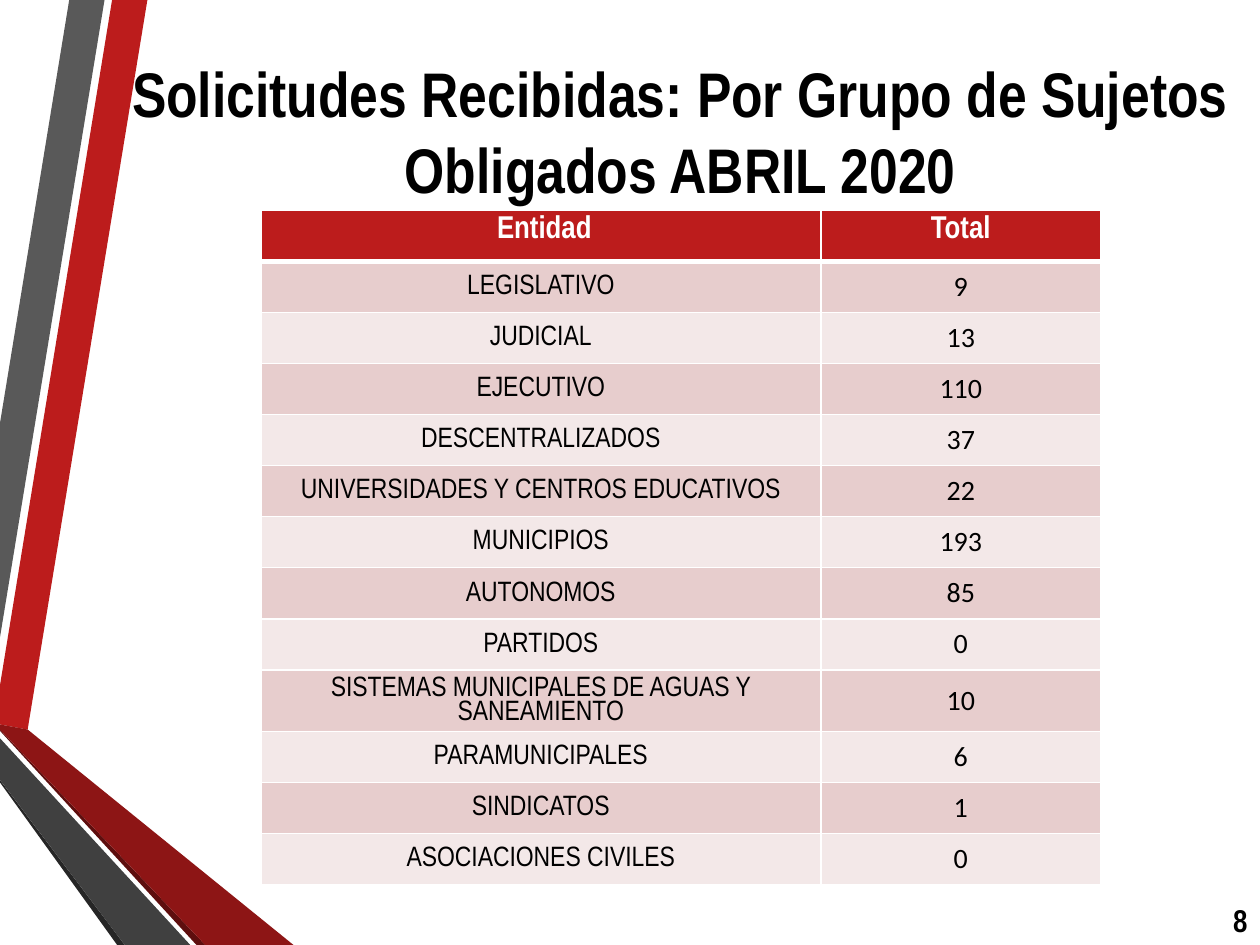
from typing import NamedTuple

from lxml.etree import SubElement
from pptx import Presentation
from pptx.dml.color import RGBColor
from pptx.enum.text import MSO_ANCHOR as Anchor, PP_ALIGN as Align
from pptx.oxml.ns import qn
from pptx.util import Inches, Pt

WIDTH, HEIGHT = 10, 7.5
NARROW, ROUND = "Arial Narrow", "Calibri"
RED, WHITE, BLACK = "BC1C1C", "FFFFFF", "000000"
BANDS = ("E7CDCD", "F3E8E8")
TIGHT = 0.9


class Ribbon(NamedTuple):
    color: str
    corners: list[tuple[float, float]]


class Entity(NamedTuple):
    label: str
    total: int


class Column(NamedTuple):
    heading: str
    share: float
    font: str
    spacing: float
    insets: tuple[float, float, float, float]


RIBBONS = [
    Ribbon(RED, [(0, 5.44), (0, 5.75), (0.22, 5.79), (1.17, 0), (0.89, 0)]),
    Ribbon("595959", [(0.83, 0), (0.55, 0), (0, 3.36), (0, 5.06)]),
    Ribbon("262626", [(0, 6.19), (0, 6.21), (0.93, HEIGHT), (0.99, HEIGHT)]),
    Ribbon("5E0E0E", [(0, 5.79), (0, 5.8), (1.56, HEIGHT), (1.63, HEIGHT)]),
    Ribbon("8D1515", [(0, 5.79), (1.63, HEIGHT), (2.33, HEIGHT), (0.22, 5.79), (0, 5.75)]),
    Ribbon("404040", [(0, 6.19), (0.99, HEIGHT), (1.51, HEIGHT), (0, 5.86)]),
]

COLUMNS = [
    Column(" Entidad", 2 / 3, NARROW, TIGHT, (0.01, 0.01, 0.01, 0)),
    Column("Total", 1 / 3, ROUND, 1, (0.1, 0.05, 0.1, 0.05)),
]

ENTITIES = [
    Entity("LEGISLATIVO", 9),
    Entity("JUDICIAL", 13),
    Entity("EJECUTIVO", 110),
    Entity("DESCENTRALIZADOS", 37),
    Entity("UNIVERSIDADES Y CENTROS EDUCATIVOS", 22),
    Entity("MUNICIPIOS", 193),
    Entity("AUTONOMOS", 85),
    Entity("PARTIDOS", 0),
    Entity("SISTEMAS MUNICIPALES DE AGUAS Y SANEAMIENTO", 10),
    Entity("PARAMUNICIPALES", 6),
    Entity("SINDICATOS", 1),
    Entity("ASOCIACIONES CIVILES", 0),
]


def paint(fill, color: str) -> None:
    fill.solid()
    fill.fore_color.rgb = RGBColor.from_string(color)


def write(frame, text: str, *, size: float, font: str = NARROW, color: str = BLACK,
          bold: bool = False, align=Align.CENTER, spacing: float = 1) -> None:
    paragraph = frame.paragraphs[0]
    paragraph.text = text
    paragraph.alignment = align
    paragraph.line_spacing = spacing
    for run in paragraph.runs:
        run.font.size = Pt(size)
        run.font.name = font
        run.font.bold = bold
        run.font.color.rgb = RGBColor.from_string(color)


def add_label(slide, text: str, box: tuple[float, float, float, float], **style) -> None:
    frame = slide.shapes.add_textbox(*map(Inches, box)).text_frame
    frame.word_wrap = True
    frame.vertical_anchor = Anchor.MIDDLE
    write(frame, text, bold=True, **style)


def add_ribbon(slide, ribbon: Ribbon) -> None:
    start, *others = [(Inches(x), Inches(y)) for x, y in ribbon.corners]
    outline = slide.shapes.build_freeform(*start)
    outline.add_line_segments(others, close=True)
    band = outline.convert_to_shape()
    band.shadow.inherit = False
    paint(band.fill, ribbon.color)
    band.line.fill.background()


def set_borders(cell, bottom: float = 1, top: float = 1) -> None:
    properties = cell._tc.get_or_add_tcPr()
    widths = {"a:lnL": 1, "a:lnR": 1, "a:lnT": top, "a:lnB": bottom}
    for position, (side, width) in enumerate(widths.items()):
        edge = properties.makeelement(qn(side), {"w": str(Pt(width))})
        properties.insert(position, edge)
        solid = SubElement(edge, qn("a:solidFill"))
        SubElement(solid, qn("a:srgbClr"), val=WHITE)


def add_totals(slide, left: float, top: float, width: float, height: float) -> None:
    rows = len(ENTITIES) + 1
    table = slide.shapes.add_table(
        rows, len(COLUMNS), *map(Inches, (left, top, width, height))).table
    for row in table.rows:
        row.height = Inches(height / rows)
    for index, column in enumerate(COLUMNS):
        table.columns[index].width = Inches(width * column.share)
        heading = table.cell(0, index)
        paint(heading.fill, RED)
        set_borders(heading, bottom=3)
        write(heading.text_frame, column.heading, size=18, color=WHITE,
              bold=True, spacing=TIGHT)
        for number, entity in enumerate(ENTITIES):
            cell = table.cell(number + 1, index)
            paint(cell.fill, BANDS[number % 2])
            set_borders(cell, top=1 if number else 3)
            cell.vertical_anchor = Anchor.MIDDLE
            (cell.margin_left, cell.margin_top,
             cell.margin_right, cell.margin_bottom) = map(Inches, column.insets)
            write(cell.text_frame, str(entity[index]), size=16,
                  font=column.font, spacing=column.spacing)


def main() -> None:
    deck = Presentation()
    deck.slide_width, deck.slide_height = Inches(WIDTH), Inches(HEIGHT)
    slide = deck.slides.add_slide(deck.slide_layouts[6])
    for ribbon in RIBBONS:
        add_ribbon(slide, ribbon)
    add_label(slide, "8", (0.953 * WIDTH, 7.1, 0.47, 0.4), size=18, align=Align.RIGHT)
    add_totals(slide, 2.07, 1.67, WIDTH * 2 / 3, 5.27)
    add_label(slide, "Solicitudes Recibidas: Por Grupo de Sujetos\vObligados ABRIL 2020",
              (0.65, 0.67, 9.5, 0.73), size=36)
    deck.save("out.pptx")


if __name__ == "__main__":
    main()
